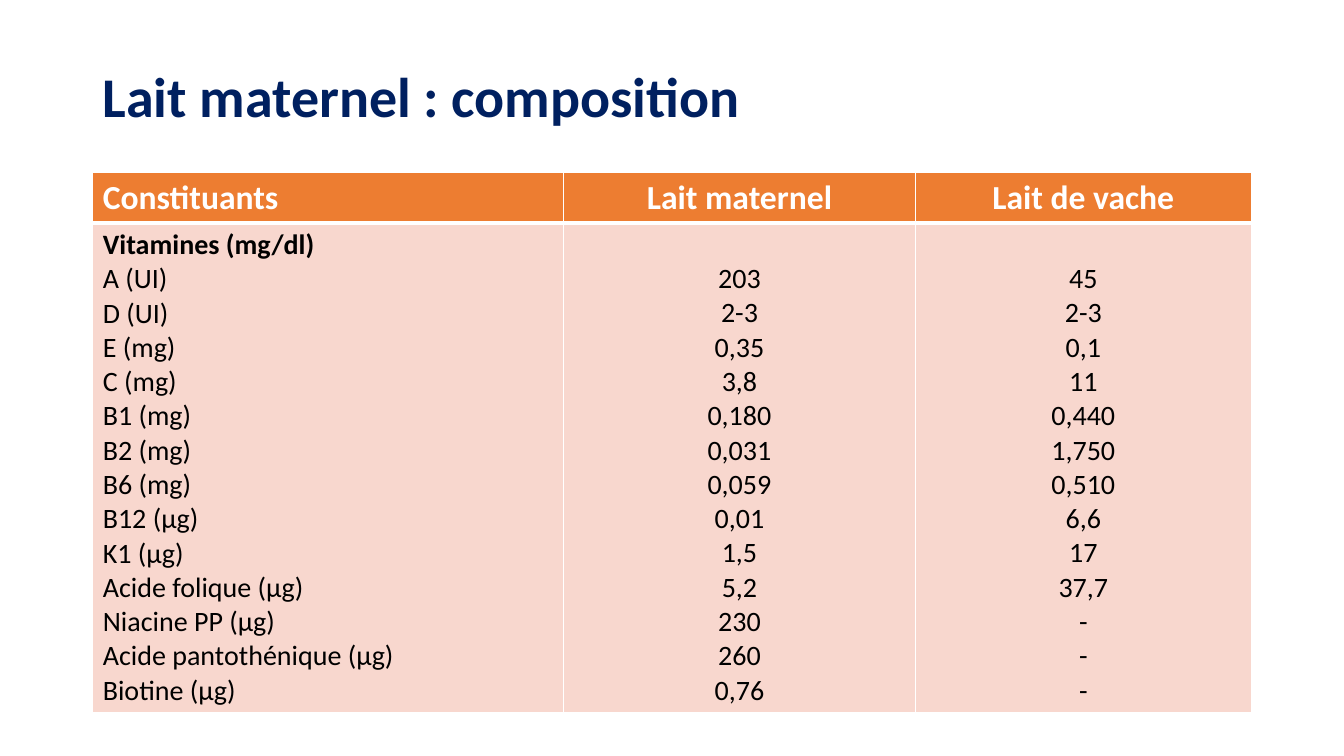
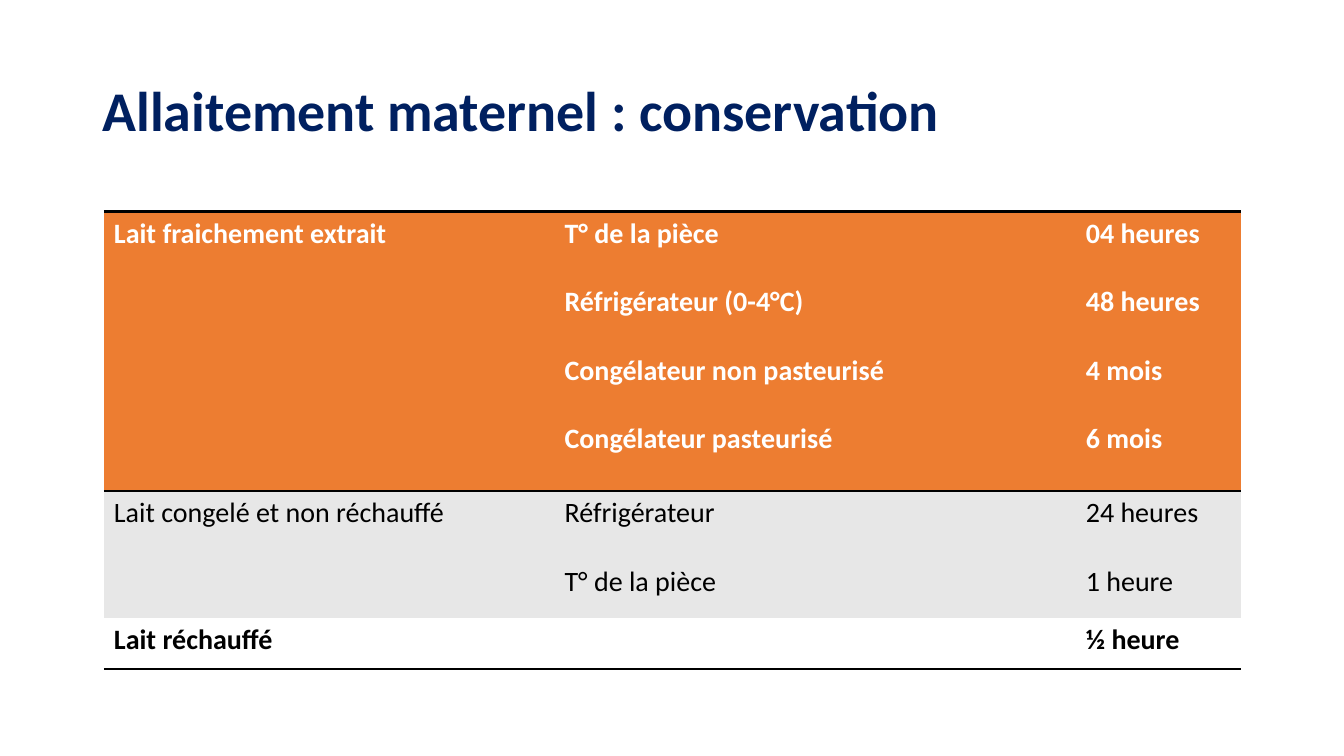
from lxml.etree import SubElement
from pptx import Presentation
from pptx.dml.color import RGBColor
from pptx.enum.text import MSO_ANCHOR, PP_ALIGN
from pptx.oxml.ns import qn
from pptx.util import Inches, Pt

# Shared look
INK = {"navy": "002060", "orange": "ED7D31", "peach": "F8D7CE",
       "grey": "E7E7E7", "white": "FFFFFF", "black": "000000"}
FACE = "Calibri"
LINE = 24.4  # height of one 20 pt line, in points
LEFT, MID = PP_ALIGN.LEFT, PP_ALIGN.CENTER
TOP, LOW = MSO_ANCHOR.TOP, MSO_ANCHOR.BOTTOM

# Text formats: size, weight and colour
HEAD = {"size": Pt(40), "bold": True, "color": "navy"}
COLS = {"size": Pt(24), "bold": True, "color": "white"}
BODY = {"size": Pt(20), "bold": False, "color": "black"}
BOLD = {**BODY, "bold": True}
PALE = {**BOLD, "color": "white"}

# Slide 1: vitamins, (name, breast milk, cow's milk)
VITS = [("A (UI)", "203", "45"), ("D (UI)", "2-3", "2-3"),
        ("E (mg)", "0,35", "0,1"), ("C (mg)", "3,8", "11"),
        ("B1 (mg)", "0,180", "0,440"), ("B2 (mg)", "0,031", "1,750"),
        ("B6 (mg)", "0,059", "0,510"), ("B12 (µg)", "0,01", "6,6"),
        ("K1 (µg)", "1,5", "17"), ("Acide folique (µg)", "5,2", "37,7"),
        ("Niacine PP (µg)", "230", "-"),
        ("Acide pantothénique (µg)", "260", "-"),
        ("Biotine (µg)", "0,76", "-")]

# Slide 2: storage, columns of lines for each row
FRESH = [["Lait fraichement extrait"],
         ["T° de la pièce", "Réfrigérateur (0-4°C)",
          "Congélateur non pasteurisé", "Congélateur pasteurisé"],
         ["04 heures", "48 heures", "4 mois", "6 mois"]]
THAWED = [["Lait congelé et non réchauffé"],
          ["Réfrigérateur", "T° de la pièce"],
          ["24 heures", "1 heure"]]
WARMED = [["Lait réchauffé"], [], ["½ heure"]]


def rgb(name):
    return RGBColor.from_string(INK[name])


def style(font, form):
    for key, val in {"name": FACE, **form}.items():
        if key == "color":
            font.color.rgb = rgb(val)
        else:
            setattr(font, key, val)


def write(frame, lines, form, align=LEFT, gap=0):
    for i, line in enumerate(lines):
        para = frame.add_paragraph() if i else frame.paragraphs[0]
        para.alignment = align
        if i and gap:
            para.space_before = Pt(gap)
        run = para.add_run()
        run.text = line
        style(run.font, form)


def title(slide, text, top):
    box = slide.shapes.add_textbox(Inches(0.92), Inches(top),
                                   Inches(11.5), Inches(1.45))
    frame = box.text_frame
    frame.word_wrap = True
    frame.vertical_anchor = MSO_ANCHOR.MIDDLE
    write(frame, [text], HEAD)
    frame.paragraphs[0].line_spacing = 0.9


def edge(cell, lines):
    """Draw the sides named in lines as (colour, points); clear the others."""
    props = cell._tc.get_or_add_tcPr()
    for side in "LRTB":
        line = SubElement(props, qn("a:ln" + side))
        if side in lines:
            color, width = lines[side]
            line.set("w", str(Pt(width)))
            fill = SubElement(line, qn("a:solidFill"))
            SubElement(fill, qn("a:srgbClr")).set("val", INK[color])
        else:
            SubElement(line, qn("a:noFill"))


def table(slide, left, top, cols, rows):
    """Add an unfilled grid; rows are (height, fill, borders)."""
    grid = slide.shapes.add_table(
        len(rows), len(cols), Inches(left), Inches(top),
        Inches(sum(cols)), Inches(sum(row[0] for row in rows))).table
    grid.first_row = grid.horz_banding = False
    for col, width in zip(grid.columns, cols):
        col.width = Inches(width)
    for row, (height, fill, lines) in zip(grid.rows, rows):
        row.height = Inches(height)
        for cell in row.cells:
            edge(cell, lines)
            cell.fill.solid()
            cell.fill.fore_color.rgb = rgb(fill)
    return grid


def milk(slide):
    title(slide, "Lait maternel : composition", 0.26)
    thin, thick = ("white", 1), ("white", 3)
    sides = {"L": thin, "R": thin}
    grid = table(slide, 0.92, 1.71, [4.67, 3.49, 3.33], [
        (0.5, "orange", {**sides, "T": thin, "B": thick}),
        (4.86, "peach", {**sides, "T": thick, "B": thin})])
    heads = ["Constituants", "Lait maternel", "Lait de vache"]
    for i, (head, vals) in enumerate(zip(heads, zip(*VITS))):
        align = MID if i else LEFT
        write(grid.cell(0, i).text_frame, [head], COLS, align)
        cell = grid.cell(1, i)
        cell.vertical_anchor = LOW if i else TOP
        lines = vals if i else ("Vitamines (mg/dl)", *vals)
        write(cell.text_frame, lines, BODY, align)
    group = grid.cell(1, 0).text_frame.paragraphs[0]
    style(group.runs[0].font, BOLD)


def store(slide):
    title(slide, "Allaitement maternel : conservation", 0.4)
    rule = ("black", 2)
    grid = table(slide, 1.03, 2.1, [4.47, 5.17, 1.64], [
        (2.77, "orange", {"T": rule, "B": rule}),
        (1.26, "grey", {"T": rule}),
        (0.51, "white", {"B": rule})])
    parts = [(FRESH, PALE), (THAWED, BODY), (WARMED, BOLD)]
    for row, (cells, form) in zip(grid.rows, parts):
        for cell, lines in zip(row.cells, cells):
            write(cell.text_frame, lines, form, gap=LINE)


def main():
    deck = Presentation()
    deck.slide_width, deck.slide_height = Inches(13.33), Inches(7.5)
    for build in (milk, store):
        build(deck.slides.add_slide(deck.slide_layouts[6]))
    deck.save("out.pptx")


if __name__ == "__main__":
    main()
